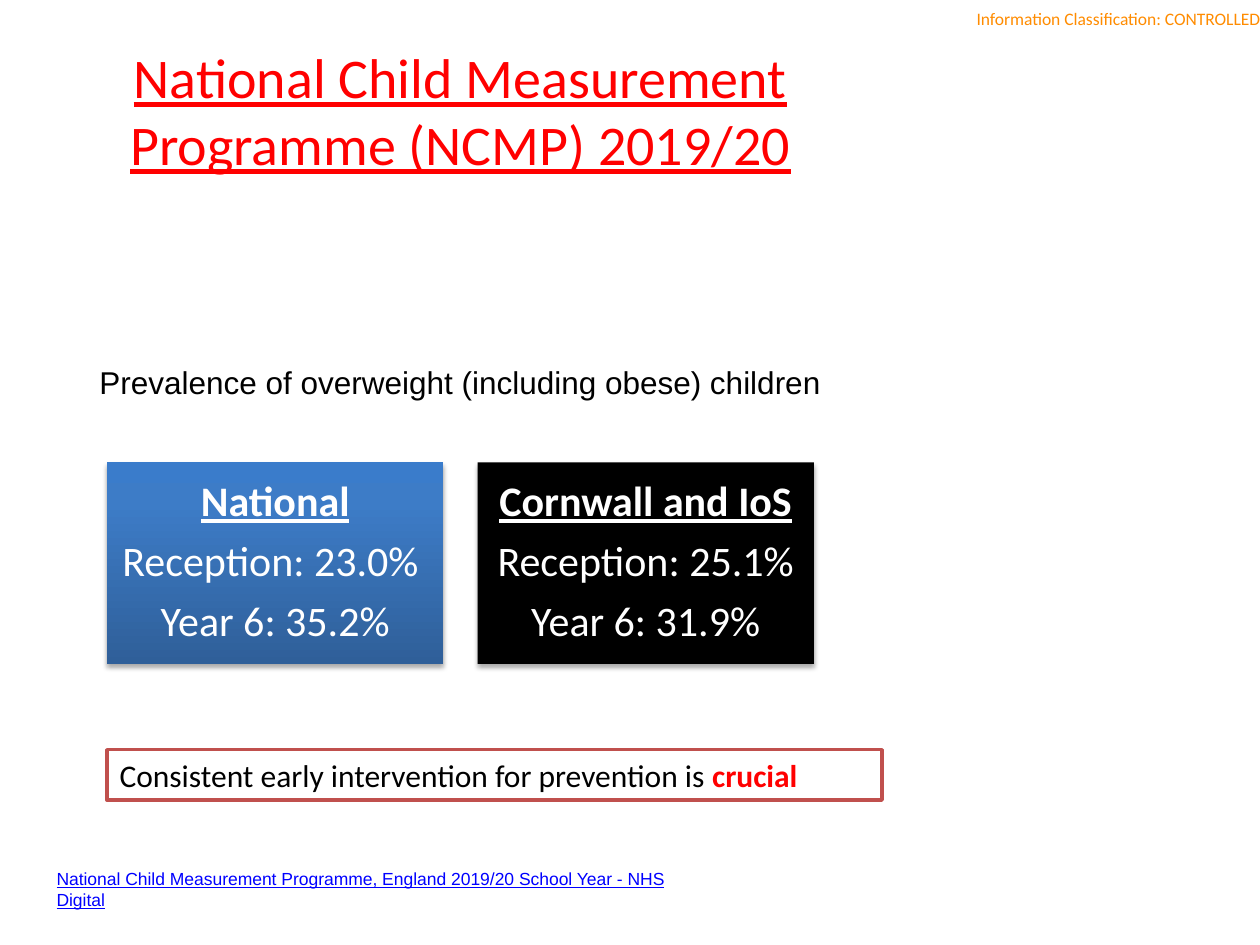
from lxml import etree
from pptx import Presentation
from pptx import util as u
from pptx.dml.color import RGBColor
from pptx.enum import shapes, text
from pptx.oxml.ns import qn

Inches, Pt = u.Inches, u.Pt
ALIGN, ANCHOR = text.PP_ALIGN, text.MSO_ANCHOR
CARD_STOPS = [(0, "2F5F99"), (80, "3D7CC7"), (100, "3A7CCB")]


def rgb(value):
    return RGBColor.from_string(value)


def add_run(p, words, size, color, font="Calibri", bold=False, underline=False):
    r = p.add_run()
    r.text = words
    r.font.name, r.font.size = font, Pt(size)
    r.font.bold, r.font.underline = bold, underline
    r.font.color.rgb = rgb(color)


def add_label(s, box, words, size, color, align=ALIGN.LEFT, margin=None, **style):
    tf = s.shapes.add_textbox(*map(Inches, box)).text_frame
    tf.word_wrap = True
    if margin is not None:
        tf.margin_left = tf.margin_right = Inches(margin)
        tf.margin_top = tf.margin_bottom = Inches(margin)
        tf.vertical_anchor = ANCHOR.MIDDLE
    p = tf.paragraphs[0]
    p.alignment = align
    add_run(p, words, size, color, **style)


def add_rect(s, box):
    sp = s.shapes.add_shape(shapes.MSO_SHAPE.RECTANGLE, *map(Inches, box))
    sp.shadow.inherit = False
    sp.text_frame.word_wrap = True
    return sp


def fill_gradient(sp, stops):
    sp.fill.gradient()
    sp.fill.gradient_angle = 90
    gs_list = sp.element.spPr.find(".//" + qn("a:gsLst"))
    for gs in list(gs_list):
        gs_list.remove(gs)
    for position, color in stops:
        gs = etree.SubElement(gs_list, qn("a:gs"), pos=str(position * 1000))
        etree.SubElement(gs, qn("a:srgbClr"), val=color)


def add_shadow(sp):
    effects = sp.element.spPr.find(qn("a:effectLst"))
    shadow = etree.SubElement(effects, qn("a:outerShdw"), blurRad=str(Pt(3.1)),
                              dist=str(Pt(1.8)), dir="5400000", rotWithShape="0")
    color = etree.SubElement(shadow, qn("a:srgbClr"), val="000000")
    etree.SubElement(color, qn("a:alpha"), val="35000")


def add_card(s, box, heading, figures, fill):
    sp = add_rect(s, box)
    if isinstance(fill, str):
        sp.fill.solid()
        sp.fill.fore_color.rgb = rgb(fill)
    else:
        fill_gradient(sp, fill)
    sp.line.fill.background()
    add_shadow(sp)
    tf = sp.text_frame
    tf.vertical_anchor = ANCHOR.MIDDLE
    tf.margin_left = tf.margin_right = tf.margin_top = tf.margin_bottom = Inches(0.1)
    for i, line in enumerate([heading, *figures]):
        p = tf.paragraphs[0] if i == 0 else tf.add_paragraph()
        p.alignment = ALIGN.CENTER
        p.line_spacing = 0.9
        p.space_after = Pt(8.4)
        add_run(p, line, 24, "FFFFFF", bold=i == 0, underline=i == 0)


def add_cards(s, left, top, width, height, gap):
    cards = [
        ("National", ["Reception: 23.0% ", "Year 6: 35.2%"], CARD_STOPS),
        ("Cornwall and IoS", ["Reception: 25.1%", "Year 6: 31.9%"], "000000"),
    ]
    for i, card in enumerate(cards):
        add_card(s, (left + i * (width + gap), top, width, height), *card)


def add_message(s, box):
    sp = add_rect(s, box)
    sp.fill.solid()
    sp.fill.fore_color.rgb = rgb("FFFFFF")
    sp.line.color.rgb = rgb("C0504D")
    sp.line.width = Pt(2)
    sp.text_frame.vertical_anchor = ANCHOR.TOP
    p = sp.text_frame.paragraphs[0]
    p.alignment = ALIGN.LEFT
    add_run(p, "Consistent early intervention for prevention is ", 18, "000000")
    add_run(p, "crucial", 18, "FF0000", bold=True)


def main():
    prs = Presentation()
    prs.slide_width, prs.slide_height = Inches(10), Inches(7.5)
    s = prs.slides.add_slide(prs.slide_layouts[6])

    # Classification and title
    add_label(s, (7.37, 0, 2.63, 0.29), "Information Classification: CONTROLLED",
              10, "FF8C00", ALIGN.RIGHT, margin=0)
    add_label(s, (0.35, 0.29, 6.61, 1.1),
              "National Child Measurement Programme (NCMP) 2019/20",
              32, "FF0000", ALIGN.CENTER, underline=True)

    # Prevalence figures
    add_label(s, (0.69, 2.83, 6.85, 0.4),
              "Prevalence of overweight (including obese) children",
              18, "000000", font="Arial")
    add_cards(s, 0.85, 3.67, 2.67, 1.6, gap=0.27)

    # Key message and source
    add_message(s, (0.85, 5.95, 6.15, 0.4))
    add_label(s, (0.35, 6.84, 5.38, 0.44),
              "National Child Measurement Programme, England 2019/20 School Year"
              " - NHS Digital", 10, "0000FF", font="Arial", underline=True)

    prs.save("out.pptx")


if __name__ == "__main__":
    main()
